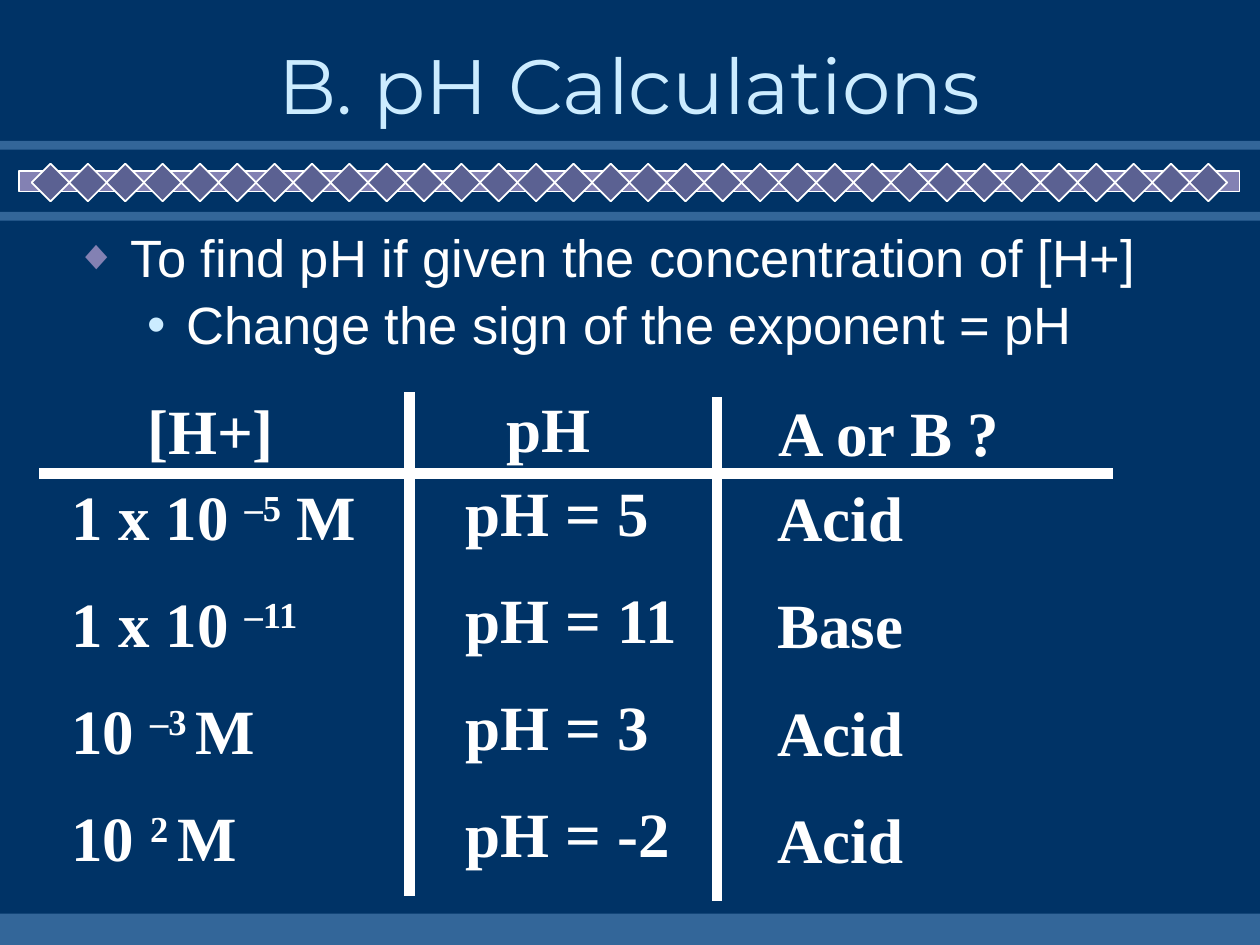
import dataclasses

import pptx
import pptx.dml.color
import pptx.enum.shapes
import pptx.enum.text
import pptx.oxml
import pptx.oxml.ns
import pptx.util
from pptx.util import Cm

SHAPES = pptx.enum.shapes.MSO_SHAPE


@dataclasses.dataclass(frozen=True)
class Theme:
    background: str = "003366"
    band: str = "336699"
    strip: str = "8381B3"
    diamond: str = "5B6192"
    white: str = "FFFFFF"
    pale: str = "CCECFF"
    title_font: str = "Montserrat"
    body_font: str = "Arial"
    table_font: str = "Times New Roman"
    title_size: int = 44
    body_size: int = 30
    table_size: int = 36


THEME = Theme()

# Each cell is a list of (text, is superscript) runs
CONCENTRATIONS = [
    [("1 x 10 ", False), ("–5", True), (" M", False)],
    [("1 x 10 ", False), ("–11", True)],
    [("10 ", False), ("–3 ", True), ("M", False)],
    [("10 ", False), ("2 ", True), ("M", False)],
]
PH_VALUES = [[(text, False)] for text in ("pH = 5", "pH = 11", "pH = 3", "pH = -2")]
ACID_OR_BASE = [[(text, False)] for text in ("Acid", "Base", "Acid", "Acid")]


def color(value):
    return pptx.dml.color.RGBColor.from_string(value)


def add_xml(parent, tag, **attributes):
    element = pptx.oxml.ns.qn(tag)
    child = parent.makeelement(element, attributes)
    parent.append(child)
    return child


def add_block(slide, preset, left, top, width, height, fill, outlined=False):
    shape = slide.shapes.add_shape(preset, Cm(left), Cm(top), Cm(width), Cm(height))
    shape.shadow.inherit = False
    shape.fill.solid()
    shape.fill.fore_color.rgb = color(fill)
    if outlined:
        shape.line.color.rgb = color(THEME.white)
        shape.line.width = pptx.util.Pt(1)
    else:
        shape.line.fill.background()


def add_rule(slide, start_x, start_y, end_x, end_y):
    line = slide.shapes.add_connector(
        pptx.enum.shapes.MSO_CONNECTOR.STRAIGHT,
        Cm(start_x), Cm(start_y), Cm(end_x), Cm(end_y))
    line.line.color.rgb = color(THEME.white)
    line.line.width = pptx.util.Pt(6)
    add_xml(line._element.spPr, "a:effectLst")


def add_run(paragraph, text, font, size, text_color, bold=False):
    run = paragraph.add_run()
    run.text = text
    run.font.name = font
    run.font.size = pptx.util.Pt(size)
    run.font.color.rgb = color(text_color)
    run.font.bold = bold
    return run


def set_space_before(paragraph, percent):
    """Space before a paragraph as a share of its line height."""
    space = add_xml(paragraph._p.get_or_add_pPr(), "a:spcBef")
    add_xml(space, "a:spcPct", val=str(percent * 1000))


def add_text_box(slide, left, top, width, height):
    box = slide.shapes.add_textbox(Cm(left), Cm(top), Cm(width), Cm(height))
    box.text_frame.word_wrap = True
    return box.text_frame


def next_paragraph(frame, index):
    return frame.add_paragraph() if index else frame.paragraphs[0]


def add_cells(slide, left, top, width, height, cells):
    frame = add_text_box(slide, left, top, width, height)
    frame.auto_size = pptx.enum.text.MSO_AUTO_SIZE.SHAPE_TO_FIT_TEXT
    for index, cell in enumerate(cells):
        paragraph = next_paragraph(frame, index)
        set_space_before(paragraph, 50)
        for text, superscript in cell:
            run = add_run(paragraph, text, THEME.table_font, THEME.table_size,
                          THEME.white, bold=True)
            if superscript:
                run.font._element.set("baseline", "30000")


def add_bullet(paragraph, text, level, indent, hanging, mark, mark_color, mark_size):
    paragraph.level = level
    paragraph.line_spacing = 0.9
    set_space_before(paragraph, 20)
    properties = paragraph._p.get_or_add_pPr()
    properties.set("marL", str(Cm(indent)))
    properties.set("indent", str(-Cm(hanging)))
    bullet_color = add_xml(properties, "a:buClr")
    add_xml(bullet_color, "a:srgbClr", val=mark_color)
    add_xml(properties, "a:buSzPct", val=str(mark_size * 1000))
    add_xml(properties, "a:buFont", typeface=THEME.body_font)
    add_xml(properties, "a:buChar", char=mark)
    add_run(paragraph, text, THEME.body_font, THEME.body_size, THEME.white)


def add_title(slide, text):
    title = slide.shapes.title
    title.left, title.top, title.width, title.height = Cm(1.9), Cm(0.64), Cm(21.59), Cm(2.11)
    frame = title.text_frame
    frame.vertical_anchor = pptx.enum.text.MSO_ANCHOR.MIDDLE
    frame.auto_size = pptx.enum.text.MSO_AUTO_SIZE.NONE
    paragraph = frame.paragraphs[0]
    paragraph.alignment = pptx.enum.text.PP_ALIGN.CENTER
    run = add_run(paragraph, text, THEME.title_font, THEME.title_size, THEME.pale)
    # Text shadow, placed right after the fill as the schema asks
    effects = add_xml(run.font._element, "a:effectLst")
    shadow = add_xml(effects, "a:outerShdw", dist="38100", dir="2700000", algn="tl")
    add_xml(shadow, "a:srgbClr", val="000000")
    run.font.fill._xPr.find(pptx.oxml.ns.qn("a:solidFill")).addnext(effects)


def add_decoration(slide):
    for top, height in ((2.84, 0.18), (4.27, 0.18), (18.42, 0.63)):
        add_block(slide, SHAPES.RECTANGLE, 0, top, 25.4, height, THEME.band)
    add_block(slide, SHAPES.RECTANGLE, 0.38, 3.45, 24.61, 0.41, THEME.strip, outlined=True)
    count, first, last = 32, 0.64, 23.98
    step = (last - first) / (count - 1)
    for index in range(count):
        add_block(slide, SHAPES.DIAMOND, first + index * step, 3.3, 0.76, 0.76,
                  THEME.diamond, outlined=True)


def main():
    presentation = pptx.Presentation()
    presentation.slide_width, presentation.slide_height = Cm(25.4), Cm(19.05)
    slide = presentation.slides.add_slide(presentation.slide_layouts[5])
    slide.background.fill.solid()
    slide.background.fill.fore_color.rgb = color(THEME.background)

    add_decoration(slide)
    add_title(slide, "B. pH Calculations")

    # Rule for finding pH
    body = add_text_box(slide, 1.27, 4.55, 23.5, 1.93)
    add_bullet(next_paragraph(body, 0), "To find pH if given the concentration of [H+]",
               0, 1.12, 1.12, "◆", THEME.strip, 80)
    add_bullet(next_paragraph(body, 1), "Change the sign of the exponent = pH",
               1, 2.24, 0.79, "•", THEME.pale, 100)

    # Worked examples, column by column
    add_cells(slide, 1.19, 9.5, 7.65, 8.64, CONCENTRATIONS)
    add_cells(slide, 9.14, 9.42, 6.88, 8.64, PH_VALUES)
    add_cells(slide, 15.42, 9.53, 6.88, 8.64, ACID_OR_BASE)

    # Ruled lines between columns and under the headings
    add_rule(slide, 0.79, 9.55, 22.43, 9.55)
    add_rule(slide, 8.26, 7.9, 8.26, 18.06)
    add_rule(slide, 14.45, 8, 14.45, 18.16)

    # Column headings
    for text, left, top, width in (("[H+]", 2.72, 7.77, 3.28), ("pH", 9.96, 7.72, 3.28),
                                   ("A or B ?", 15.44, 7.8, 5.72)):
        add_cells(slide, left, top, width, 1.78, [[(text, False)]])

    presentation.save("out.pptx")


if __name__ == "__main__":
    main()
